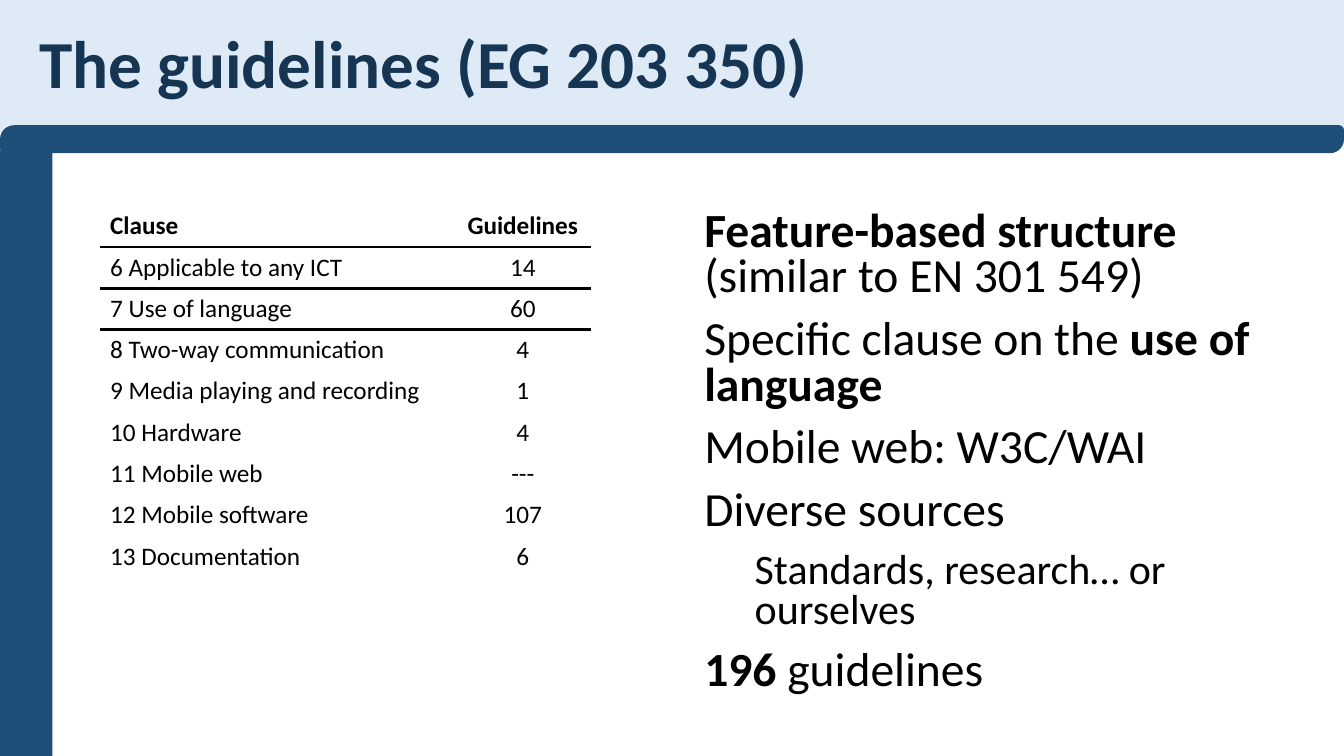
from dataclasses import dataclass

from lxml.etree import SubElement
from pptx import Presentation
from pptx.dml.color import RGBColor
from pptx.enum.shapes import MSO_SHAPE as Shape
from pptx.enum.text import MSO_ANCHOR as Anchor, PP_ALIGN as Align
from pptx.oxml.ns import qn
from pptx.util import Emu, Pt

PX = 6350
FONT = "Calibri"
PLAIN_TABLE = "{2D5ABB26-0587-4C30-8999-92F81FD0307C}"
COLORS = {"band": "DEEBF7", "bar": "1F4E79", "title": "153553", "text": "000000"}


@dataclass(frozen=True)
class Box:
    x: int
    y: int
    w: int
    h: int

    def emu(self) -> list[Emu]:
        return [px(n) for n in (self.x, self.y, self.w, self.h)]


@dataclass(frozen=True)
class Block:
    box: Box
    color: str
    shape: Shape = Shape.RECTANGLE
    adjustments: tuple[float, ...] = ()
    flip: bool = False


@dataclass(frozen=True)
class Run:
    text: str
    bold: bool = False


@dataclass(frozen=True)
class Point:
    runs: tuple[Run, ...]
    size: int = 34
    indent: int = 0


@dataclass(frozen=True)
class Clause:
    name: str
    guidelines: str
    bold: bool = False


HEADER = Box(0, 0, 1920, 190)
BLOCKS = [
    Block(HEADER, "band"),
    Block(Box(0, 215, 75, 865), "bar"),
    Block(Box(0, 179, 1920, 40), "bar", Shape.ROUND_2_DIAG_RECTANGLE, (0.17, 0.5), True),
]
POINTS = [
    Point((Run("Feature-based structure", True), Run(" (similar to EN 301 549)"))),
    Point((Run("Specific clause on the "), Run("use of language", True))),
    Point((Run("Mobile web: W3C/WAI"),)),
    Point((Run("Diverse sources"),)),
    Point((Run("Standards, research… or ourselves"),), 30, 72),
    Point((Run("196", True), Run(" guidelines"))),
]
CLAUSES = [
    Clause("Clause", "Guidelines", True),
    Clause("6 Applicable to any ICT", "14"),
    Clause("7 Use of language", "60"),
    Clause("8 Two-way communication", "4"),
    Clause("9 Media playing and recording", "1"),
    Clause("10 Hardware", "4"),
    Clause("11 Mobile web", "---"),
    Clause("12 Mobile software", "107"),
    Clause("13 Documentation", "6"),
]
COLUMNS = (507, 194)
ROW = 59
RULED_ROWS = (0, 1)


def px(n: int) -> Emu:
    return Emu(n * PX)


def add_run(p, text: str, *, size: int, bold: bool = False, color: str = "text") -> None:
    r = p.add_run()
    r.text = text
    r.font.name = FONT
    r.font.size = Pt(size)
    r.font.bold = bold
    r.font.color.rgb = RGBColor.from_string(COLORS[color])


def add_block(s, block: Block) -> None:
    sp = s.shapes.add_shape(block.shape, *block.box.emu())
    sp.shadow.inherit = False
    sp.fill.solid()
    sp.fill.fore_color.rgb = RGBColor.from_string(COLORS[block.color])
    sp.line.fill.background()
    for i, value in enumerate(block.adjustments):
        sp.adjustments[i] = value
    if block.flip:
        sp._element.spPr.xfrm.set("flipV", "1")


def add_frame(s, box: Box):
    tf = s.shapes.add_textbox(*box.emu()).text_frame
    tf.word_wrap = True
    return tf


def add_title(s, text: str) -> None:
    tf = add_frame(s, HEADER)
    tf.vertical_anchor = Anchor.MIDDLE
    tf.margin_left = px(56)
    p = tf.paragraphs[0]
    p.line_spacing = 0.9
    add_run(p, text, size=48, bold=True, color="title")


def add_points(s, box: Box, points: list[Point]) -> None:
    tf = add_frame(s, box)
    for i, point in enumerate(points):
        p = tf.add_paragraph() if i else tf.paragraphs[0]
        p.line_spacing = 0.8
        p.space_before = Pt(6 if i else 0)
        p.space_after = Pt(6)
        if point.indent:
            p.level = 1
            p._p.get_or_add_pPr().set("marL", str(px(point.indent)))
        for run in point.runs:
            add_run(p, run.text, size=point.size, bold=run.bold)


def add_border(cell, side: str) -> None:
    ln = SubElement(cell._tc.get_or_add_tcPr(), qn(f"a:{side}"), w=str(Pt(2.25)))
    fill = SubElement(ln, qn("a:solidFill"))
    SubElement(fill, qn("a:srgbClr"), val=COLORS["text"])


def add_clauses(s, x: int, y: int, clauses: list[Clause]) -> None:
    box = Box(x, y, sum(COLUMNS), ROW * len(clauses))
    table = s.shapes.add_table(len(clauses), len(COLUMNS), *box.emu()).table
    table.first_row = table.horz_banding = False
    table._tbl.tblPr.find(qn("a:tableStyleId")).text = PLAIN_TABLE
    for column, width in zip(table.columns, COLUMNS):
        column.width = px(width)
    for i, clause in enumerate(clauses):
        table.rows[i].height = px(ROW)
        for j, text in enumerate((clause.name, clause.guidelines)):
            cell = table.cell(i, j)
            p = cell.text_frame.paragraphs[0]
            p.alignment = Align.CENTER if j else Align.LEFT
            add_run(p, text, size=18, bold=clause.bold)
            if i - 1 in RULED_ROWS:
                add_border(cell, "lnT")
            if i in RULED_ROWS:
                add_border(cell, "lnB")
            cell.fill.background()


def main() -> None:
    prs = Presentation()
    prs.slide_width, prs.slide_height = px(1920), px(1080)
    s = prs.slides.add_slide(prs.slide_layouts[6])
    for block in BLOCKS:
        add_block(s, block)
    add_title(s, "The guidelines (EG 203 350)")
    add_points(s, Box(992, 294, 867, 713), POINTS)
    add_clauses(s, 143, 294, CLAUSES)
    prs.save("out.pptx")


if __name__ == "__main__":
    main()
